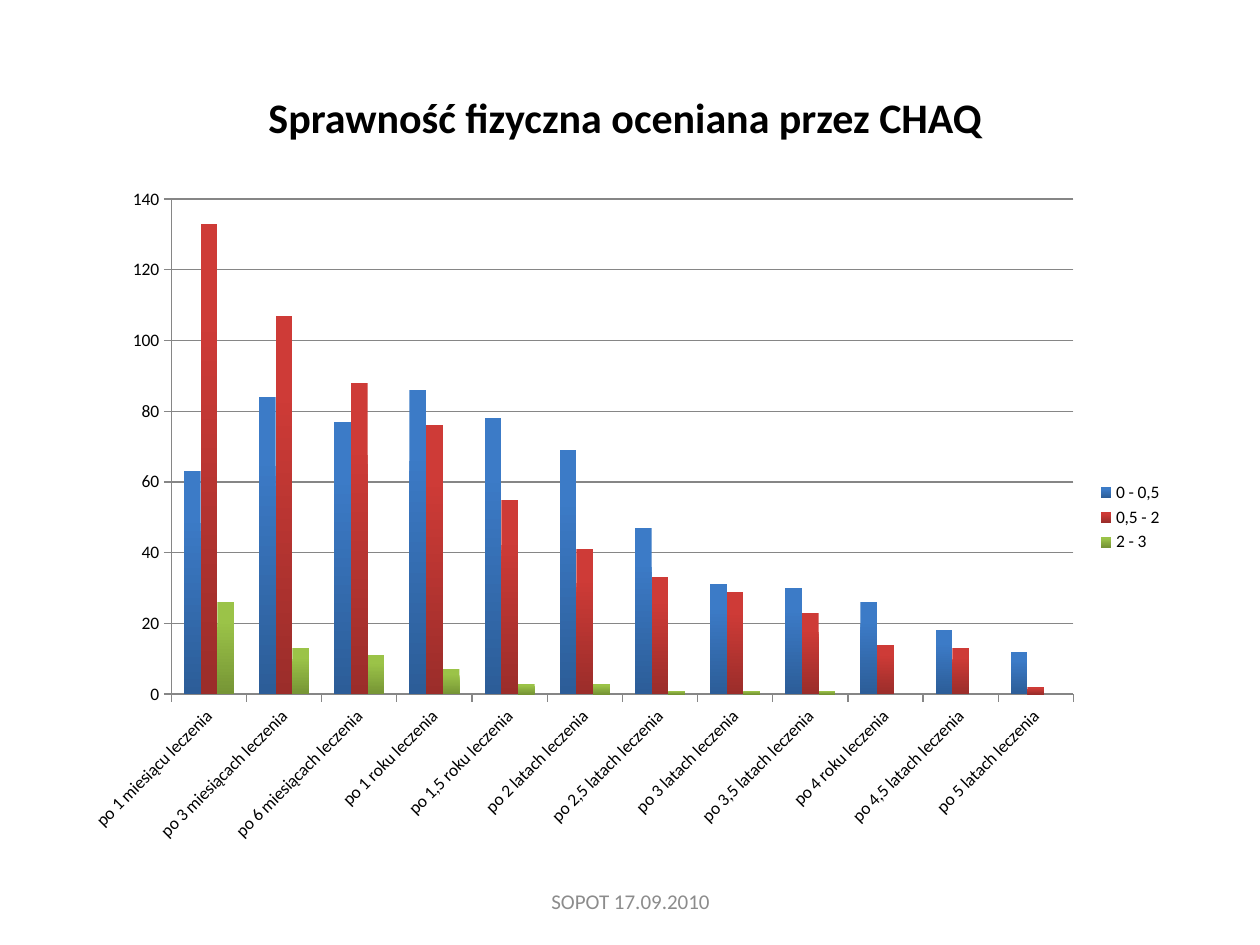
from lxml import etree
from pptx import Presentation
from pptx import util as u
from pptx.chart.data import CategoryChartData
from pptx.dml.color import RGBColor
from pptx.enum import chart as ch, text
from pptx.oxml.ns import qn

# Content
TITLE = "Sprawność fizyczna oceniana przez CHAQ "
FOOTER = "SOPOT 17.09.2010"
PERIODS = ["1 miesiącu", "3 miesiącach", "6 miesiącach", "1 roku", "1,5 roku", "2 latach",
           "2,5 latach", "3 latach", "3,5 latach", "4 roku", "4,5 latach", "5 latach"]
SCORES = {
    "0 - 0,5": [63, 84, 77, 86, 78, 69, 47, 31, 30, 26, 18, 12],
    "0,5 - 2": [133, 107, 88, 76, 55, 41, 33, 29, 23, 14, 13, 2],
    "2 - 3": [26, 13, 11, 7, 3, 3, 1, 1, 1, None, None, None],
}

THEME = {
    "font": "Calibri",
    "title": (24, "000000"),
    "chart": (10, "000000"),
    "footer": (12, "8C8C8C"),
    "line": "868686",
    # top and bottom colour of each column gradient
    "columns": [("3C7BC7", "2C5D98"), ("CE3B37", "9B2D2A"), ("9BC348", "769535")],
}

# Inches: left, top, width, height; the plot area is measured inside the chart
TITLE_BOX = (0.5, 0.3, 9, 1.25)
CHART_BOX = (0.51, 1.39, 8.82, 5.43)
PLOT_BOX = (0.85, 0.19, 7.16, 3.93)
FOOTER_BOX = (3.42, 6.95, 3.17, 0.4)


def style_font(font, role, bold=False):
    size, color = THEME[role]
    font.name, font.size, font.bold = THEME["font"], u.Pt(size), bold
    font.color.rgb = RGBColor.from_string(color)


def add_line_of_text(slide, words, box, role, bold=False):
    frame = slide.shapes.add_textbox(*map(u.Inches, box)).text_frame
    frame.word_wrap = True
    frame.vertical_anchor = text.MSO_ANCHOR.MIDDLE
    paragraph = frame.paragraphs[0]
    paragraph.alignment = text.PP_ALIGN.CENTER
    run = paragraph.add_run()
    run.text = words
    style_font(run.font, role, bold)


def style_line(line):
    line.color.rgb = RGBColor.from_string(THEME["line"])
    line.width = u.Pt(0.75)


def place_plot_area(chart):
    plot_area = chart.plots[0]._element.getparent()
    for old in plot_area.findall(qn("c:layout")):
        plot_area.remove(old)
    layout = etree.Element(qn("c:layout"))
    plot_area.insert(0, layout)
    manual = etree.SubElement(layout, qn("c:manualLayout"))
    settings = {"layoutTarget": "inner", "xMode": "edge", "yMode": "edge"}
    chart_size = CHART_BOX[2:] * 2
    for tag, length, whole in zip("xywh", PLOT_BOX, chart_size):
        settings[tag] = length / whole
    for tag, value in settings.items():
        etree.SubElement(manual, qn("c:" + tag)).set("val", str(value))


def add_score_chart(slide):
    data = CategoryChartData()
    data.categories = [f"po {period} leczenia" for period in PERIODS]
    for score, patients in SCORES.items():
        data.add_series(score, patients)
    box = map(u.Inches, CHART_BOX)
    chart = slide.shapes.add_chart(ch.XL_CHART_TYPE.COLUMN_CLUSTERED, *box, data).chart
    chart.has_title = False
    style_font(chart.font, "chart")
    place_plot_area(chart)

    # Columns
    plot = chart.plots[0]
    plot.gap_width, plot.overlap, plot.vary_by_categories = 150, 0, False
    for series, colors in zip(plot.series, THEME["columns"]):
        fill = series.format.fill
        fill.gradient()
        fill.gradient_angle = 270
        for stop, color, position in zip(fill.gradient_stops, colors, (0.2, 1)):
            stop.color.rgb = RGBColor.from_string(color)
            stop.position = position

    # Axes
    for axis in (chart.category_axis, chart.value_axis):
        axis.major_tick_mark = ch.XL_TICK_MARK.OUTSIDE
        style_line(axis.format.line)
        style_font(axis.tick_labels.font, "chart")
    periods_body = chart.category_axis._element.find(qn("c:txPr")).find(qn("a:bodyPr"))
    periods_body.set("rot", "-2700000")
    periods_body.set("vert", "horz")
    scale = chart.value_axis
    scale.minimum_scale, scale.maximum_scale, scale.major_unit = 0, 140, 20
    scale.has_major_gridlines = True
    style_line(scale.major_gridlines.format.line)

    # Legend
    chart.has_legend = True
    chart.legend.position = ch.XL_LEGEND_POSITION.RIGHT
    chart.legend.include_in_layout = False
    style_font(chart.legend.font, "chart")


def main():
    deck = Presentation()
    deck.slide_width, deck.slide_height = u.Inches(10), u.Inches(7.5)
    slide = deck.slides.add_slide(deck.slide_layouts[6])
    add_line_of_text(slide, TITLE, TITLE_BOX, "title", bold=True)
    add_score_chart(slide)
    add_line_of_text(slide, FOOTER, FOOTER_BOX, "footer")
    deck.save("out.pptx")


if __name__ == "__main__":
    main()
